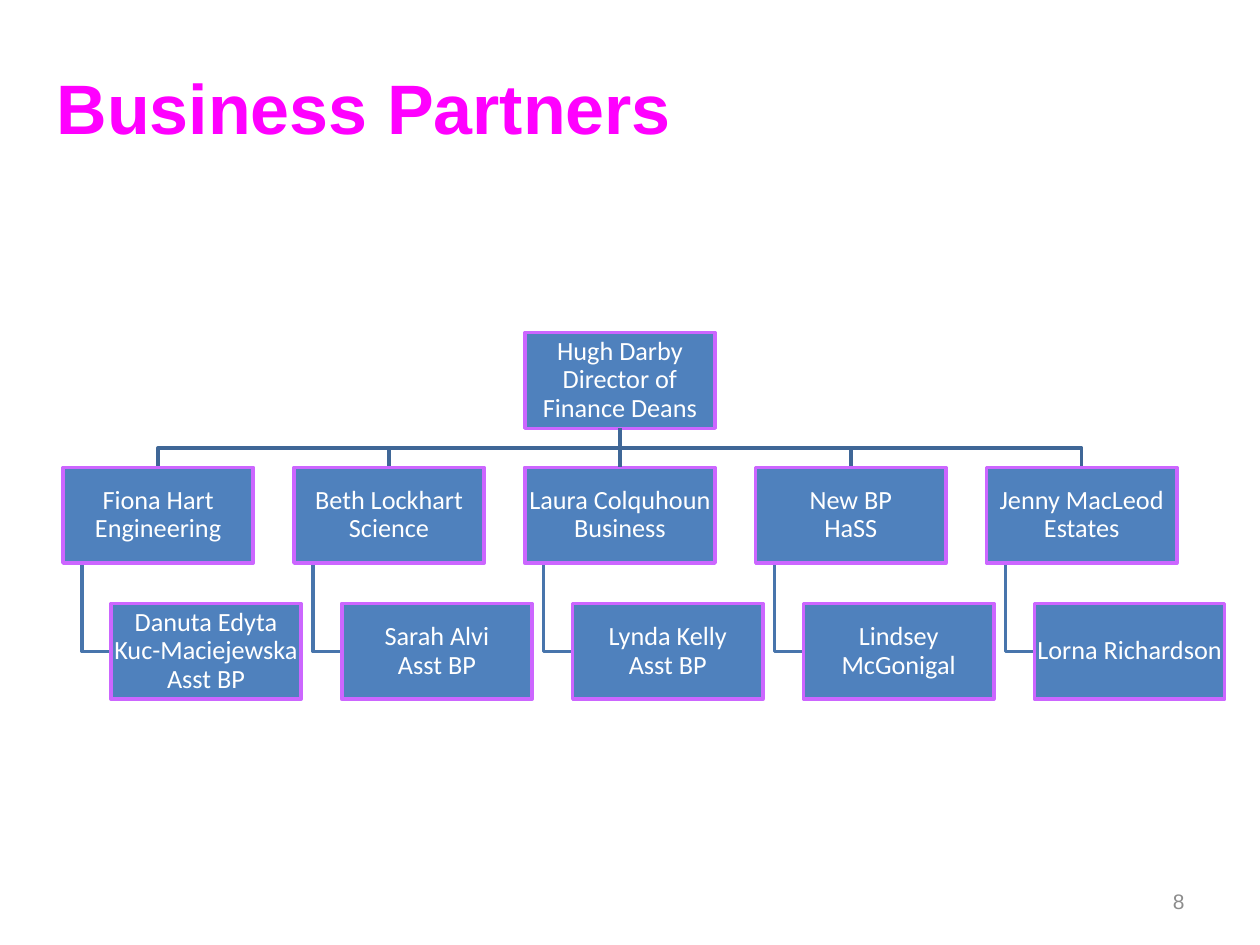
from lxml import etree
from pptx import Presentation
from pptx.dml.color import RGBColor
from pptx.enum.shapes import MSO_CONNECTOR, MSO_SHAPE
from pptx.enum.text import MSO_ANCHOR, PP_ALIGN
from pptx.oxml.ns import qn
from pptx.util import Inches, Pt

RECTANGLE, STRAIGHT = MSO_SHAPE.RECTANGLE, MSO_CONNECTOR.STRAIGHT
MIDDLE, BOTTOM = MSO_ANCHOR.MIDDLE, MSO_ANCHOR.BOTTOM
LEFT, CENTER, RIGHT = PP_ALIGN.LEFT, PP_ALIGN.CENTER, PP_ALIGN.RIGHT

# Chart geometry in inches
BOX_WIDTH, BOX_HEIGHT = 1.51, 0.76
FIRST_LEFT, LAST_LEFT = 0.5, 7.83
DIRECTOR_TOP, PARTNER_TOP, ASSISTANT_TOP = 2.64, 3.71, 4.79
ASSISTANT_INDENT, SPINE_INDENT = 0.38, 0.15

DIRECTOR = "Hugh Darby Director of Finance Deans"
TEAMS = [
    ("Fiona Hart Engineering", "Danuta Edyta Kuc-Maciejewska Asst BP"),
    ("Beth Lockhart Science", "Sarah Alvi\vAsst BP"),
    ("Laura Colquhoun Business", "Lynda Kelly\vAsst BP"),
    ("New BP\vHaSS", "Lindsey McGonigal"),
    ("Jenny MacLeod Estates", "Lorna Richardson"),
]


def color(code):
    return RGBColor.from_string(code)


class OrgChartSlide:
    BOX_FILL, BOX_LINE = "4F81BD", "CC66FF"
    UPPER_LINE, LOWER_LINE = "3F6797", "4875AC"
    LINE_WIDTH = Pt(2)

    def __init__(self, page):
        self.page = page

    def set_text(self, shape, text, font, size, code, align, anchor, bold=False):
        frame = shape.text_frame
        frame.word_wrap = True
        frame.vertical_anchor = anchor
        para = frame.paragraphs[0]
        para.text = text
        para.alignment = align
        para.font.name, para.font.size = font, Pt(size)
        para.font.bold = bold
        para.font.color.rgb = color(code)
        return para

    def outline(self, shape, code):
        shape.line.color.rgb = color(code)
        shape.line.width = self.LINE_WIDTH

    def title(self, text):
        box = self.page.shapes.title
        box.left, box.top = Inches(0.35), Inches(0.21)
        box.width, box.height = Inches(7.4), Inches(1.02)
        self.set_text(box, text, "Arial", 40, "FF00FF", LEFT, BOTTOM, bold=True)

    def page_number(self, number):
        box = self.page.shapes.add_textbox(
            Inches(7.17), Inches(6.95), Inches(2.33), Inches(0.4))
        self.set_text(box, number, "Arial", 12, "8C8C8C", RIGHT, MIDDLE)

    def box(self, left, top, text):
        box = self.page.shapes.add_shape(
            RECTANGLE, Inches(left), Inches(top),
            Inches(BOX_WIDTH), Inches(BOX_HEIGHT))
        box.shadow.inherit = False
        box.fill.solid()
        box.fill.fore_color.rgb = color(self.BOX_FILL)
        self.outline(box, self.BOX_LINE)
        frame = box.text_frame
        frame.margin_left = frame.margin_right = Inches(0.01)
        frame.margin_top = frame.margin_bottom = Inches(0.01)
        para = self.set_text(box, text, "Calibri", 15, "FFFFFF", CENTER, MIDDLE)
        para.line_spacing = 0.9
        return box

    def bent_line(self, points, code):
        start, *rest = [(Inches(x), Inches(y)) for x, y in points]
        builder = self.page.shapes.build_freeform(*start)
        builder.add_line_segments(rest, close=False)
        line = builder.convert_to_shape()
        line.shadow.inherit = False
        line.fill.background()
        self.outline(line, code)

    def straight_line(self, upper, lower):
        line = self.page.shapes.add_connector(STRAIGHT, 0, 0, 0, 0)
        line.begin_connect(upper, 2)
        line.end_connect(lower, 0)
        self.outline(line, self.UPPER_LINE)
        etree.SubElement(line._element.spPr, qn("a:effectLst"))


def main():
    deck = Presentation()
    deck.slide_width, deck.slide_height = Inches(10), Inches(7.5)
    page = deck.slides.add_slide(deck.slide_layouts[0])
    subtitle = page.placeholders[1].element
    subtitle.getparent().remove(subtitle)
    slide = OrgChartSlide(page)

    slide.title("Business Partners")

    step = (LAST_LEFT - FIRST_LEFT) / (len(TEAMS) - 1)
    lefts = [FIRST_LEFT + step * index for index in range(len(TEAMS))]
    middle = len(TEAMS) // 2
    director_x = lefts[middle] + BOX_WIDTH / 2
    director_bottom = DIRECTOR_TOP + BOX_HEIGHT
    branch_y = (director_bottom + PARTNER_TOP) / 2
    assistant_y = ASSISTANT_TOP + BOX_HEIGHT / 2

    # Bent lines, behind the boxes
    for index, left in enumerate(lefts):
        spine_x, partner_x = left + SPINE_INDENT, left + BOX_WIDTH / 2
        slide.bent_line([(spine_x, PARTNER_TOP + BOX_HEIGHT),
                         (spine_x, assistant_y),
                         (left + ASSISTANT_INDENT, assistant_y)],
                        slide.LOWER_LINE)
        if index != middle:
            slide.bent_line([(director_x, director_bottom),
                             (director_x, branch_y),
                             (partner_x, branch_y),
                             (partner_x, PARTNER_TOP)], slide.UPPER_LINE)

    # Director, partners and assistants
    director = slide.box(lefts[middle], DIRECTOR_TOP, DIRECTOR)
    partners = []
    for left, (partner, assistant) in zip(lefts, TEAMS):
        partners.append(slide.box(left, PARTNER_TOP, partner))
        slide.box(left + ASSISTANT_INDENT, ASSISTANT_TOP, assistant)
    slide.straight_line(director, partners[middle])

    slide.page_number("8")
    deck.save("out.pptx")


if __name__ == "__main__":
    main()
